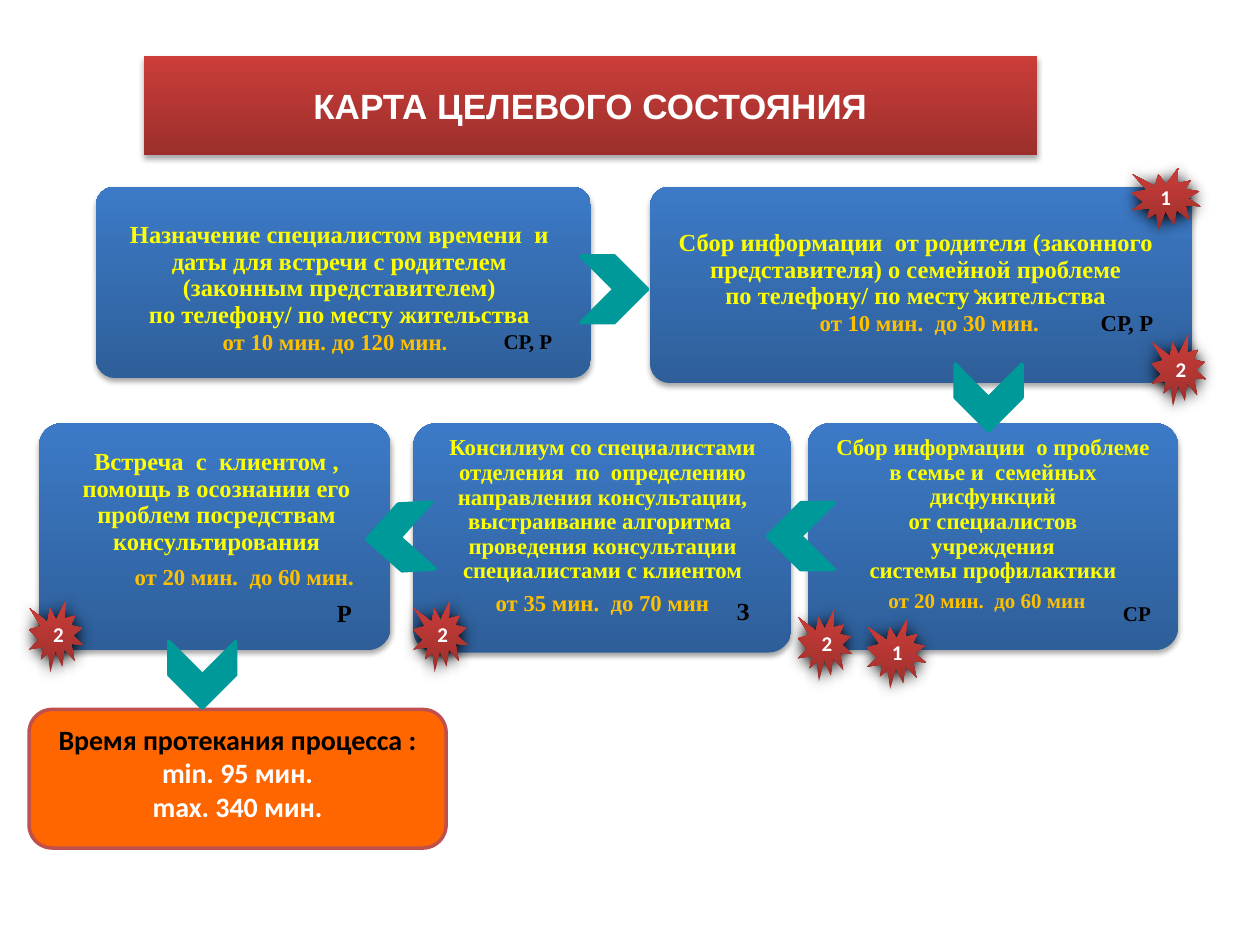
from lxml import etree
from pptx import Presentation
from pptx.dml.color import RGBColor
from pptx.enum.shapes import MSO_SHAPE
from pptx.enum.text import MSO_ANCHOR, PP_ALIGN
from pptx.oxml.ns import qn
from pptx.util import Pt

ROUNDED, CHEVRON, BURST = MSO_SHAPE.ROUNDED_RECTANGLE, MSO_SHAPE.CHEVRON, MSO_SHAPE.EXPLOSION1
TOP, MIDDLE, CENTER = MSO_ANCHOR.TOP, MSO_ANCHOR.MIDDLE, PP_ALIGN.CENTER

DARK_BLUE, BLUE = RGBColor(0x2E, 0x5F, 0x99), RGBColor(0x3C, 0x7A, 0xC7)
DARK_RED, RED = RGBColor(0x9C, 0x2F, 0x2C), RGBColor(0xCB, 0x3D, 0x39)
BORDER_RED = RGBColor(0xC0, 0x50, 0x4D)
ORANGE, TEAL = RGBColor(0xFF, 0x66, 0x00), RGBColor(0x00, 0x99, 0x99)
YELLOW, GOLD = RGBColor(0xFF, 0xFF, 0x00), RGBColor(0xFF, 0xC0, 0x00)
BLACK, WHITE = RGBColor(0, 0, 0), RGBColor(0xFF, 0xFF, 0xFF)
SERIF, SANS, TITLE_FONT = "Times New Roman", "Calibri", "Arial"


def paint(shape, bottom, top, blur, distance, opacity):
    """Vertical gradient without outline, with a shadow straight below."""
    shape.fill.gradient()
    shape.fill.gradient_angle = 90
    for stop, color in zip(shape.fill.gradient_stops, (bottom, top)):
        stop.color.rgb = color
    shape.line.fill.background()
    shape.shadow.inherit = False
    effects = shape._element.spPr.find(qn("a:effectLst"))
    shadow = etree.SubElement(effects, qn("a:outerShdw"), blurRad=str(Pt(blur)),
                              dist=str(Pt(distance)), dir="5400000", rotWithShape="0")
    color = etree.SubElement(shadow, qn("a:srgbClr"), val="000000")
    etree.SubElement(color, qn("a:alpha"), val=str(opacity * 1000))


def write(shape, lines, font_name, anchor=TOP, spacing=1.0, wrap=True):
    """Centred bold paragraphs from (text, size, color, space after)."""
    frame = shape.text_frame
    frame.word_wrap = wrap
    frame.vertical_anchor = anchor
    for index, (text, size, color, after) in enumerate(lines):
        paragraph = frame.add_paragraph() if index else frame.paragraphs[0]
        paragraph.text = text
        formats = {"alignment": CENTER, "line_spacing": spacing,
                   "space_before": Pt(0), "space_after": Pt(after)}
        for name, value in formats.items():
            setattr(paragraph, name, value)
        font_formats = {"name": font_name, "size": Pt(size), "bold": True}
        for name, value in font_formats.items():
            setattr(paragraph.font, name, value)
        paragraph.font.color.rgb = color


presentation = Presentation()
presentation.slide_width, presentation.slide_height = Pt(720), Pt(540)
slide = presentation.slides.add_slide(presentation.slide_layouts[5])
shapes = slide.shapes

# Title banner
title = shapes.title
title.left, title.top, title.width, title.height = Pt(82), Pt(31.8), Pt(510.5), Pt(57)
paint(title, DARK_RED, RED, 3.1, 1.8, 35)
write(title, [("КАРТА ЦЕЛЕВОГО СОСТОЯНИЯ", 20, WHITE, 0)], TITLE_FONT, MIDDLE)

# Step panels, each with the box its text is set in
UPPER, LOWER = 106.6, 241.9
panels = [
    ((54.7, UPPER, 283, 109.4), (61.9, 123.8, 264.2, 81.4), [
        ("Назначение специалистом времени  и даты для встречи с родителем "
         "(законным представителем)", 14, YELLOW, 0),
        ("по телефону/ по месту жительства", 14, YELLOW, 0)]),
    ((371.5, UPPER, 309.6, 112.3), (343.4, 128.3, 360, 68), [
        ("Сбор информации  от родителя (законного представителя) "
         "о семейной проблеме", 14, YELLOW, 0),
        ("по телефону/ по месту жительства", 14, YELLOW, 0)]),
    ((461.5, LOWER, 211.7, 129.6), None, [
        ("Сбор информации  о проблеме", 13, YELLOW, 0),
        ("в семье и  семейных дисфункций", 13, YELLOW, 0),
        ("от специалистов", 13, YELLOW, 0),
        ("учреждения", 13, YELLOW, 0),
        ("системы профилактики", 13, YELLOW, 0)]),
    ((236.2, LOWER, 216, 131), None, [
        ("Консилиум со специалистами отделения  по  определению направления "
         "консультации, выстраивание алгоритма  проведения консультации "
         "специалистами с клиентом", 13, YELLOW, 4.6),
        ("от 35 мин.  до 70 мин", 13, GOLD, 0)]),
    ((22.3, LOWER, 200.9, 129.6), (33.8, 253.4, 180, 70), [
        ("Встреча  с  клиентом , помощь в осознании его проблем посредствам "
         "консультирования", 14, YELLOW, 0)]),
]
for panel_box, text_box, lines in panels:
    panel = shapes.add_shape(ROUNDED, *map(Pt, panel_box))
    panel.adjustments[0] = 0.1
    paint(panel, DARK_BLUE, BLUE, 3.1, 1.8, 35)
    holder = shapes.add_textbox(*map(Pt, text_box)) if text_box else panel
    write(holder, lines, SERIF, spacing=0.9)

# Durations and roles: text, centre x, centre y, size, color
labels = [
    ("от 10 мин. до 120 мин.", 191.4, 195, 13, GOLD),
    ("от 10 мин.  до 30 мин.", 531, 184, 13, GOLD),
    ("от 20 мин.  до 60 мин", 564, 343, 12, GOLD),
    ("от 20 мин.  до 60 мин.", 139.5, 329.5, 13, GOLD),
    (".", 557.6, 162, 14, GOLD),
    ("СР, Р", 301.7, 195, 12, BLACK),
    ("СР, Р", 644, 184, 13, BLACK),
    ("СР", 649.7, 350.3, 12, BLACK),
    ("З", 424.6, 349, 14, BLACK),
    ("Р", 196.8, 350.3, 14, BLACK),
]
LABEL_HEIGHT = 24
for text, center_x, center_y, size, color in labels:
    width = 20 + 7 * len(text)
    label = shapes.add_textbox(Pt(center_x - width / 2), Pt(center_y - LABEL_HEIGHT / 2),
                               Pt(width), Pt(LABEL_HEIGHT))
    write(label, [(text, size, color, 0)], SERIF, MIDDLE, wrap=False)

# Total process time
total = shapes.add_shape(ROUNDED, Pt(16.6), Pt(405.4), Pt(238.3), Pt(79.2))
total.shadow.inherit = False
total.fill.solid()
total.fill.fore_color.rgb = ORANGE
total.line.color.rgb = BORDER_RED
total.line.width = Pt(2)
write(total, [("Время протекания процесса :", 16, BLACK, 0),
              ("min. 95 мин.", 16, WHITE, 0),
              ("max. 340 мин.", 16, WHITE, 0)], SANS)

# Chevrons between the steps: left, top, rotation
CHEVRON_SIZE = Pt(38.2)
for left, top, rotation in [(331.9, 146.2, 0), (545.8, 208.1, 90), (438.5, 287.3, 180),
                            (209.5, 288, 176.8), (96.5, 366.5, 90)]:
    chevron = shapes.add_shape(CHEVRON, Pt(left), Pt(top), CHEVRON_SIZE, CHEVRON_SIZE)
    chevron.rotation = rotation
    chevron.shadow.inherit = False
    chevron.fill.solid()
    chevron.fill.fore_color.rgb = TEAL
    chevron.line.color.rgb = TEAL
    chevron.line.width = Pt(2)

# Numbered bursts: number, left, top, width, height
for number, *box in [("1", 495.4, 354.2, 33.8, 39.6), ("1", 646.6, 95.8, 39.6, 36),
                     ("2", 658.1, 191.5, 31, 41), ("2", 455.8, 348.5, 31, 41),
                     ("2", 236.2, 343.4, 31, 41), ("2", 16.6, 343.4, 31, 41)]:
    burst = shapes.add_shape(BURST, *map(Pt, box))
    paint(burst, DARK_RED, RED, 8.5, 1, 100)
    write(burst, [(number, 12, WHITE, 0)], SANS, MIDDLE)

presentation.save("out.pptx")
